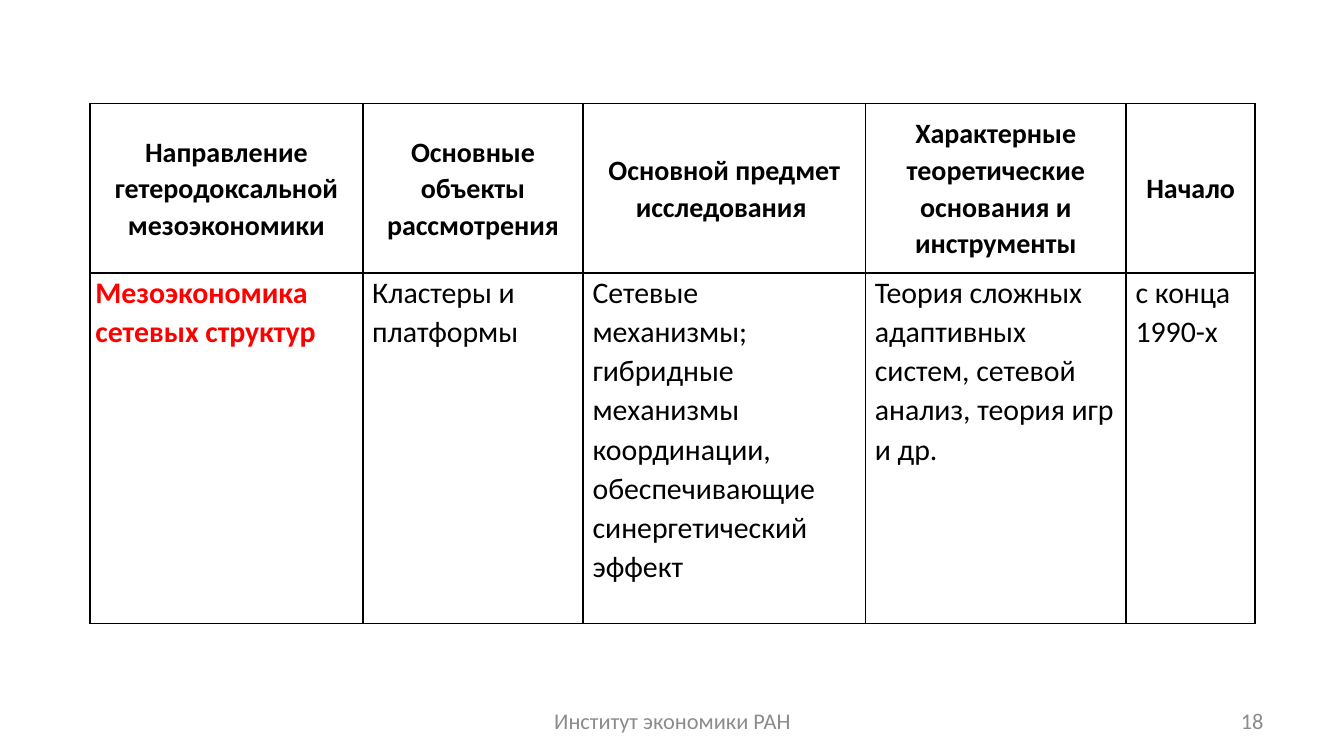
from dataclasses import dataclass

from lxml.etree import SubElement
from pptx import Presentation
from pptx.dml.color import RGBColor
from pptx.enum.text import MSO_ANCHOR, PP_ALIGN
from pptx.oxml.ns import qn
from pptx.util import Inches, Pt


@dataclass(frozen=True)
class Theme:
    """Colours and type sizes of the slide."""
    font: str = "Calibri"
    ink: str = "000000"
    accent: str = "FF0000"
    muted: str = "8C8C8C"
    paper: str = "FFFFFF"
    head: int = 15
    body: int = 16
    footer: int = 12


THEME = Theme()
COLUMNS = [2.03, 1.64, 2.1, 1.94, 0.96]
ROWS = [1.26, 2.61]
HEADINGS = [
    "Направление гетеродоксальной мезоэкономики",
    "Основные объекты рассмотрения",
    "Основной предмет исследования ",
    "Характерные теоретические основания и инструменты",
    "Начало",
]
DETAILS = [
    "Мезоэкономика сетевых структур",
    "Кластеры и платформы",
    "Сетевые механизмы; гибридные механизмы координации, "
    "обеспечивающие синергетический эффект",
    "Теория сложных адаптивных систем, сетевой анализ, теория игр и др.",
    "с конца 1990-х",
]


def add_text(p, text, size, color, bold=False, align=PP_ALIGN.LEFT):
    """Add one formatted run to an aligned paragraph."""
    p.alignment = align
    r = p.add_run()
    r.text = text
    r.font.name = THEME.font
    r.font.size = Pt(size)
    r.font.bold = bold
    r.font.color.rgb = RGBColor.from_string(color)


def set_borders(cell):
    """Draw a thin line on all four sides of a cell."""
    tc_pr = cell._tc.get_or_add_tcPr()
    for i, side in enumerate(("lnL", "lnR", "lnT", "lnB")):
        ln = SubElement(tc_pr, qn(f"a:{side}"), w=str(Pt(1)))
        fill = SubElement(ln, qn("a:solidFill"))
        SubElement(fill, qn("a:srgbClr"), val=THEME.ink)
        tc_pr.insert(i, ln)


def fill_cell(cell, text, is_head, is_first):
    """Format a table cell as a heading, a row label or plain text."""
    cell.margin_left = cell.margin_right = Inches(0.04 if is_head or is_first else 0.07)
    cell.margin_top = cell.margin_bottom = 0
    cell.vertical_anchor = MSO_ANCHOR.MIDDLE if is_head else MSO_ANCHOR.TOP
    cell.fill.solid()
    cell.fill.fore_color.rgb = RGBColor.from_string(THEME.paper)
    set_borders(cell)
    p = cell.text_frame.paragraphs[0]
    p.line_spacing = 1.07
    if is_head:
        add_text(p, text, THEME.head, THEME.ink, True, PP_ALIGN.CENTER)
    else:
        color = THEME.accent if is_first else THEME.ink
        add_text(p, text, THEME.body, color, is_first)


def add_directions_table(s):
    """Add the table of mesoeconomics directions."""
    table = s.shapes.add_table(
        len(ROWS), len(COLUMNS), Inches(0.67), Inches(0.77),
        Inches(sum(COLUMNS)), Inches(sum(ROWS))).table
    table.horz_banding = False
    for column, width in zip(table.columns, COLUMNS):
        column.width = Inches(width)
    for i, (height, texts) in enumerate(zip(ROWS, (HEADINGS, DETAILS))):
        table.rows[i].height = Inches(height)
        for j, text in enumerate(texts):
            fill_cell(table.cell(i, j), text, i == 0, j == 0)


def add_footer(s, text, left, width, align):
    """Add a muted text box on the footer line."""
    sp = s.shapes.add_textbox(Inches(left), Inches(5.21), Inches(width), Inches(0.3))
    tf = sp.text_frame
    tf.word_wrap = True
    tf.vertical_anchor = MSO_ANCHOR.MIDDLE
    add_text(tf.paragraphs[0], text, THEME.footer, THEME.muted, align=align)


def main():
    """Build and save the slide."""
    prs = Presentation()
    prs.slide_width = Inches(10)
    prs.slide_height = Inches(10 * 9 / 16)
    s = prs.slides.add_slide(prs.slide_layouts[6])
    add_directions_table(s)
    add_footer(s, "Институт экономики РАН", 3.42, 3.17, PP_ALIGN.CENTER)
    add_footer(s, "18", 7.17, 2.33, PP_ALIGN.RIGHT)
    prs.save("out.pptx")


if __name__ == "__main__":
    main()
